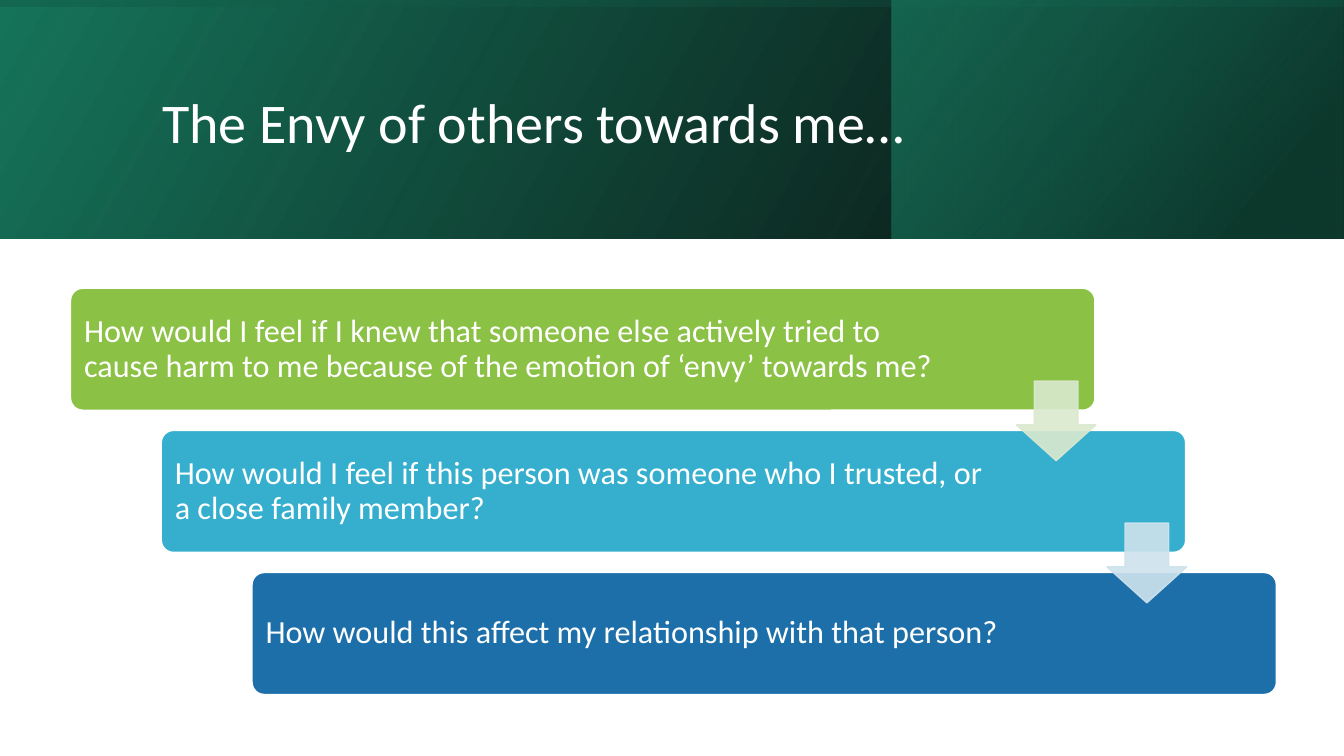
from lxml import etree
from pptx import Presentation
from pptx.dml.color import RGBColor
from pptx.enum.shapes import MSO_SHAPE
from pptx.enum.text import MSO_ANCHOR, MSO_AUTO_SIZE, PP_ALIGN
from pptx.oxml.ns import qn
from pptx.util import Inches, Pt

WHITE = RGBColor(0xFF, 0xFF, 0xFF)
BLACK = RGBColor(0x00, 0x00, 0x00)
GREEN = RGBColor(0x16, 0x74, 0x5A)
DEEP_GREEN = RGBColor(0x0E, 0x4D, 0x3C)
BRIGHT_GREEN = RGBColor(0x1D, 0x9A, 0x78)
LIME = RGBColor(0x8B, 0xC1, 0x45)
SKY = RGBColor(0x36, 0xAF, 0xCE)
BLUE = RGBColor(0x1D, 0x6F, 0xA9)
PALE_LIME = RGBColor(0xDA, 0xE9, 0xCF)
PALE_SKY = RGBColor(0xCE, 0xE3, 0xED)

BANDS = [
    ((0, 0, 13.33, 2.37), 0, 30, [(0, BLACK, 96), (1, GREEN, 100)]),
    ((8.84, 0, 4.48, 2.37), 0, 40, [(0.19, DEEP_GREEN, 68), (1, BRIGHT_GREEN, 48)]),
    ((5.48, -5.48, 2.37, 13.33), 270, 10, [(0.23, GREEN, 16), (0.99, BLACK, 45)]),
]
QUESTIONS = [
    ("How would I feel if I knew that someone else actively tried to cause harm "
     "to me because of the emotion of ‘envy’ towards me?", LIME, 1.33),
    ("How would I feel if this person was someone who I trusted, "
     "or a close family member?", SKY, 1.78),
    ("How would this affect my relationship with that person?", BLUE, 1.78),
]
ARROW_COLORS = [PALE_LIME, PALE_SKY]
STEP_X, STEP_Y = 0.9, 1.41


def add_plain_shape(slide, kind, box):
    shape = slide.shapes.add_shape(kind, *map(Inches, box))
    shape.shadow.inherit = False
    return shape


def set_opacity(shape, percents):
    colors = shape._element.spPr.iter(qn("a:srgbClr"))
    for color, percent in zip(colors, percents):
        etree.SubElement(color, qn("a:alpha")).set("val", str(percent * 1000))


def paint(shape, fill_color, line_color):
    shape.fill.solid()
    shape.fill.fore_color.rgb = fill_color
    shape.line.color.rgb = line_color
    shape.line.width = Pt(1)


def write(shape, text, size, margins):
    frame = shape.text_frame
    frame.text = text
    frame_format = {
        "word_wrap": True,
        "auto_size": MSO_AUTO_SIZE.NONE,
        "vertical_anchor": MSO_ANCHOR.MIDDLE,
        **{f"margin_{side}": Inches(gap) for side, gap in margins.items()},
    }
    for name, value in frame_format.items():
        setattr(frame, name, value)
    paragraph = frame.paragraphs[0]
    paragraph.alignment = PP_ALIGN.LEFT
    paragraph.line_spacing = 0.9
    for name, value in {"name": "Calibri", "size": Pt(size)}.items():
        setattr(paragraph.font, name, value)
    paragraph.font.color.rgb = WHITE


def add_band(slide, box, rotation, angle, stops):
    band = add_plain_shape(slide, MSO_SHAPE.RECTANGLE, box)
    band.rotation = rotation
    band._element.spPr.xfrm.set("flipH", "1")
    band.line.fill.background()
    band.fill.gradient()
    band.fill.gradient_angle = angle
    for stop, (position, color, _) in zip(band.fill.gradient_stops, stops):
        stop.position = position
        stop.color.rgb = color
    set_opacity(band, [opacity for _, _, opacity in stops])


def add_title(slide, text):
    title = slide.shapes.title
    title.left, title.top, title.width, title.height = map(
        Inches, (1.51, 0.38, 10.63, 1.72))
    write(title, text, 40, {"left": 0.1, "right": 0.1})
    slide.shapes._spTree.append(title._element)


def add_question(slide, index, text, color, right_margin):
    box = (0.7 + index * STEP_X, 2.86 + index * STEP_Y, 10.16, 1.21)
    card = add_plain_shape(slide, MSO_SHAPE.ROUNDED_RECTANGLE, box)
    card.adjustments[0] = 0.1
    paint(card, color, WHITE)
    write(card, text, 23,
          {"left": 0.1, "right": right_margin, "top": 0.1, "bottom": 0.1})


def add_arrow(slide, index, color):
    box = (10.08 + index * STEP_X, 3.78 + index * STEP_Y, 0.79, 0.79)
    arrow = add_plain_shape(slide, MSO_SHAPE.DOWN_ARROW, box)
    arrow.adjustments[0] = 0.55
    arrow.adjustments[1] = 0.45
    paint(arrow, color, color)
    set_opacity(arrow, [90, 90])


def main():
    deck = Presentation()
    deck.slide_width = Inches(13.33)
    deck.slide_height = Inches(7.5)
    slide = deck.slides.add_slide(deck.slide_layouts.get_by_name("Title Only"))
    for band in BANDS:
        add_band(slide, *band)
    add_title(slide, "The Envy of others towards me…")
    for index, question in enumerate(QUESTIONS):
        add_question(slide, index, *question)
    for index, color in enumerate(ARROW_COLORS):
        add_arrow(slide, index, color)
    deck.save("out.pptx")


if __name__ == "__main__":
    main()
